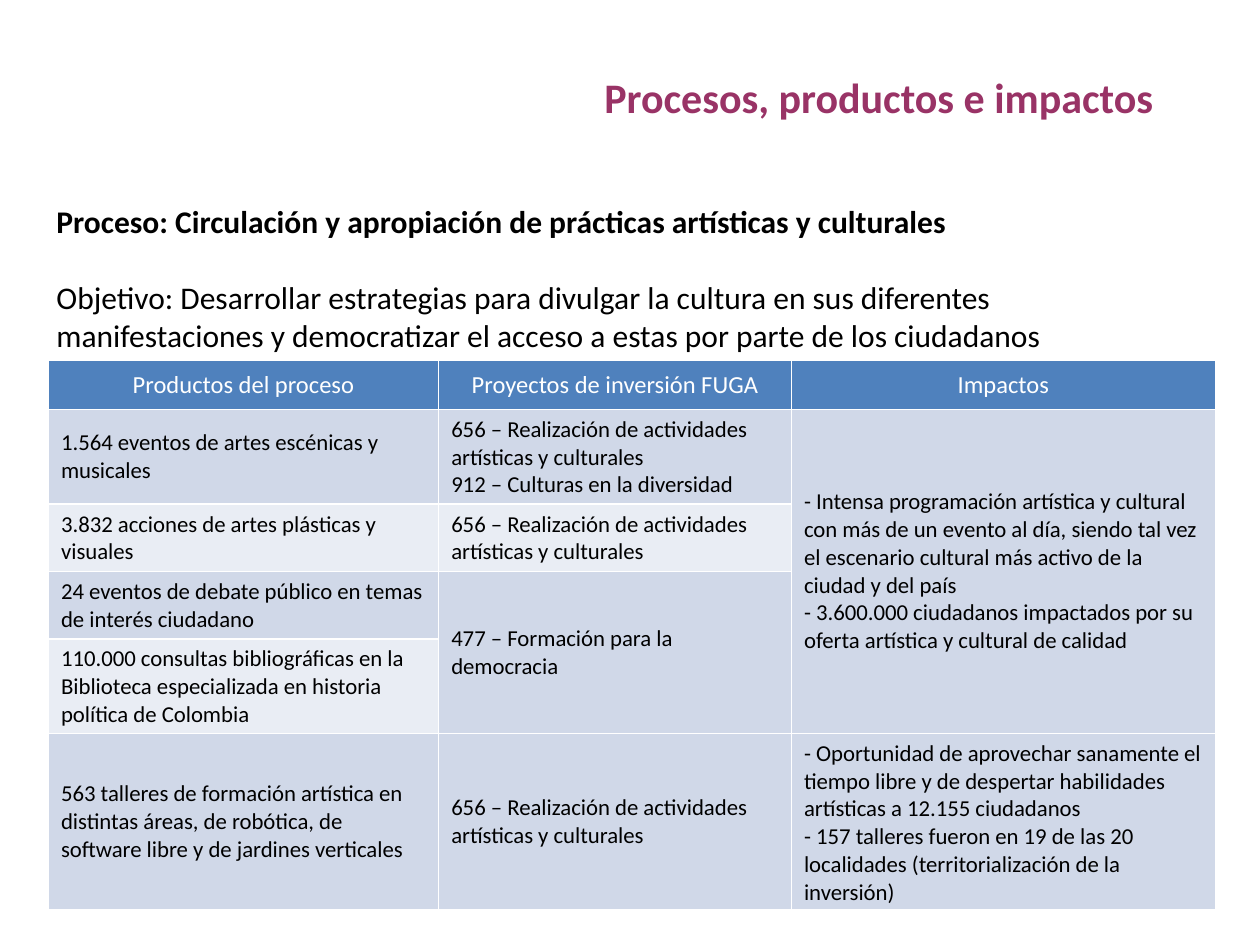
from pptx import Presentation
from pptx.dml.color import RGBColor
from pptx.enum.text import MSO_ANCHOR, PP_ALIGN
from pptx.util import Pt

LEFT, CENTER = PP_ALIGN.LEFT, PP_ALIGN.CENTER
MIDDLE = MSO_ANCHOR.MIDDLE

PLUM, BLACK, WHITE = "993366", "000000", "FFFFFF"
HEADER, BAND_DARK, BAND_LIGHT = "4F81BD", "D0D8E8", "E9EDF4"

REALIZACION = "656 – Realización de actividades artísticas y culturales"
ROWS = [
    ["Productos del proceso", "Proyectos de inversión FUGA", "Impactos"],
    ["1.564 eventos de artes escénicas y musicales",
     REALIZACION + "\n912 – Culturas en la diversidad",
     "- Intensa programación artística y cultural con más de un evento al día, "
     "siendo tal vez el escenario cultural más activo de la ciudad y del país\n"
     "- 3.600.000 ciudadanos impactados por su oferta artística y cultural de calidad"],
    ["3.832 acciones de artes plásticas y visuales", REALIZACION, ""],
    ["24 eventos de debate público en temas de interés ciudadano",
     "477 – Formación para la democracia", ""],
    ["110.000 consultas bibliográficas en la Biblioteca especializada en historia "
     "política de Colombia", "", ""],
    ["563 talleres de formación artística en distintas áreas, de robótica, de "
     "software libre y de jardines verticales",
     REALIZACION,
     "- Oportunidad de aprovechar sanamente el tiempo libre y de despertar "
     "habilidades artísticas a 12.155 ciudadanos\n"
     "- 157 talleres fueron en 19 de las 20 localidades (territorialización de la "
     "inversión)"],
]
COL_WIDTHS = [223, 201.6, 242.2]
ROW_HEIGHTS = [28, 54, 38.5, 38.5, 54, 101]
MERGES = [((1, 2), (4, 2)), ((3, 1), (4, 1))]


def rgb(value):
    return RGBColor.from_string(value)


class Deck:
    font = "Calibri"

    def __init__(self, width, height):
        self.prs = Presentation()
        self.prs.slide_width, self.prs.slide_height = Pt(width), Pt(height)
        self.s = self.prs.slides.add_slide(self.prs.slide_layouts[6])

    def style(self, p, size, color, bold=False, align=LEFT):
        p.alignment = align
        for r in p.runs:
            r.font.name = self.font
            r.font.size = Pt(size)
            r.font.bold = bold
            r.font.color.rgb = rgb(color)

    def text(self, x, y, w, h, paragraphs, size, color, align=LEFT, gap=0):
        """Add a text box; paragraphs are (text, bold) pairs."""
        tf = self.s.shapes.add_textbox(Pt(x), Pt(y), Pt(w), Pt(h)).text_frame
        tf.word_wrap = True
        tf.text = "\n".join(text for text, _ in paragraphs)
        for i, (p, (_, bold)) in enumerate(zip(tf.paragraphs, paragraphs)):
            self.style(p, size, color, bold, align)
            if i:
                p.space_before = Pt(gap)

    def table(self, x, y, rows, widths, heights, merges):
        frame = self.s.shapes.add_table(len(rows), len(widths), Pt(x), Pt(y),
                                        Pt(sum(widths)), Pt(sum(heights)))
        table = frame.table
        for col, width in zip(table.columns, widths):
            col.width = Pt(width)
        for row, height in zip(table.rows, heights):
            row.height = Pt(height)
        for first, last in merges:
            table.cell(*first).merge(table.cell(*last))
        for i, row in enumerate(rows):
            band = BAND_DARK if i % 2 else BAND_LIGHT
            for j, text in enumerate(row):
                cell = table.cell(i, j)
                cell.fill.solid()
                cell.fill.fore_color.rgb = rgb(band if i else HEADER)
                cell.vertical_anchor = MIDDLE
                if cell.is_spanned:
                    continue
                cell.text_frame.text = text
                for p in cell.text_frame.paragraphs:
                    if i:
                        self.style(p, 13, BLACK)
                    else:
                        self.style(p, 14, WHITE, align=CENTER)


def main():
    deck = Deck(720, 540)

    # Process and objective
    deck.text(25.2, 111.6, 657.4, 94.3, [
        ("Proceso: Circulación y apropiación de prácticas artísticas y culturales", True),
        ("Objetivo: Desarrollar estrategias para divulgar la cultura en sus diferentes "
         "manifestaciones y democratizar el acceso a estas por parte de los ciudadanos",
         False),
    ], 18, BLACK, gap=22)

    # Products, projects and impacts
    deck.table(27.7, 206, ROWS, COL_WIDTHS, ROW_HEIGHTS, MERGES)

    # Title
    deck.text(292.3, 37.4, 419.8, 36, [("Procesos, productos e impactos", True)],
              24, PLUM, CENTER)

    deck.prs.save("out.pptx")


if __name__ == "__main__":
    main()
